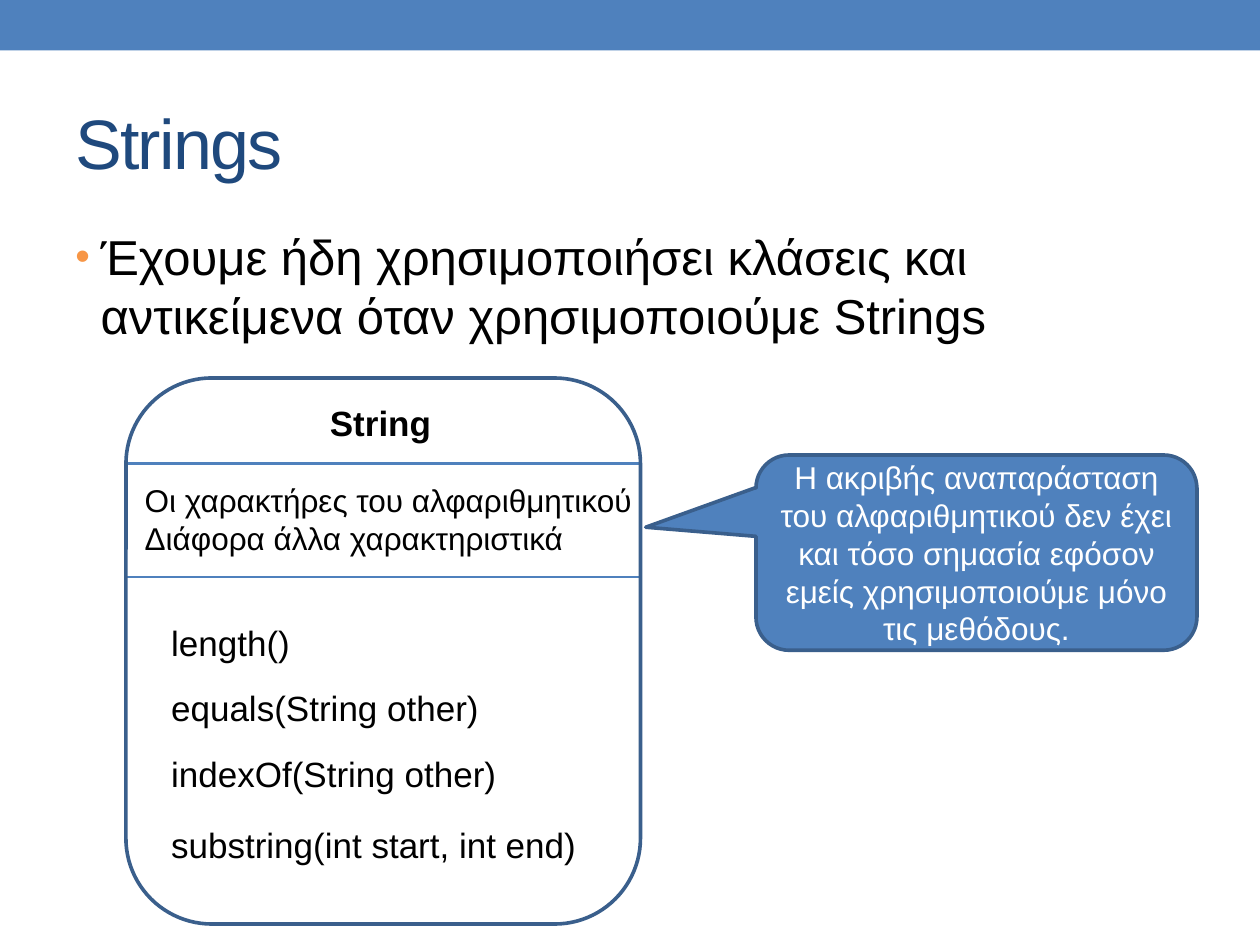
import pptx
import pptx.util
import pptx.dml.color
import pptx.enum.shapes
import pptx.enum.text
from lxml import etree

Pt = pptx.util.Pt
SHAPE = pptx.enum.shapes.MSO_SHAPE
ALIGN = pptx.enum.text.PP_ALIGN
ANCHOR = pptx.enum.text.MSO_ANCHOR
AUTO_SIZE = pptx.enum.text.MSO_AUTO_SIZE
qn = pptx.oxml.ns.qn

COLORS = {"blue": "4F81BD", "outline": "3A5F8C", "title": "1F497D",
          "bullet": "F79646", "text": "000000", "white": "FFFFFF"}
FONT = "Arial"


def rgb(name):
    return pptx.dml.color.RGBColor.from_string(COLORS[name])


def write(tf, lines, size, color="text", bold=False, align=ALIGN.LEFT):
    for i, line in enumerate(lines):
        p = tf.paragraphs[0] if i == 0 else tf.add_paragraph()
        p.text = line
        p.alignment = align
        p.font.name, p.font.size, p.font.bold = FONT, Pt(size), bold
        p.font.color.rgb = rgb(color)


def add_text(s, x, y, w, h, lines, size, color="text", bold=False, wrap=True, grow=False):
    tf = s.shapes.add_textbox(Pt(x), Pt(y), Pt(w), Pt(h)).text_frame
    tf.word_wrap = wrap
    tf.auto_size = AUTO_SIZE.SHAPE_TO_FIT_TEXT if grow else AUTO_SIZE.NONE
    write(tf, lines, size, color, bold)
    return tf


def add_box(s, kind, x, y, w, h, fill=None, line=None):
    sp = s.shapes.add_shape(kind, Pt(x), Pt(y), Pt(w), Pt(h))
    sp.shadow.inherit = False
    if fill:
        sp.fill.solid()
        sp.fill.fore_color.rgb = rgb(fill)
    else:
        sp.fill.background()
    if line:
        sp.line.color.rgb = rgb(line)
        sp.line.width = Pt(2.08)
    else:
        sp.line.fill.background()
    return sp


def add_divider(s, x, y, w):
    line = s.shapes.add_connector(pptx.enum.shapes.MSO_CONNECTOR.STRAIGHT,
                                  Pt(x), Pt(y), Pt(x + w), Pt(y))
    line.line.color.rgb = rgb("blue")
    line.line.width = Pt(1.5)
    etree.SubElement(line._element.spPr, qn("a:effectLst"))


def add_title(s, x, y, w, h, text):
    tf = add_text(s, x, y, w, h, [text], 40, "title")
    tf.vertical_anchor = ANCHOR.MIDDLE
    # Tighten the letters by one point
    tf.paragraphs[0].runs[0].font._element.set("spc", "-100")


def add_bullet(s, x, y, w, h, text):
    p = add_text(s, x, y, w, h, [text], 28).paragraphs[0]
    p.space_before = Pt(5.6)
    pPr = p._p.get_or_add_pPr()
    indent = Pt(14.4)
    pPr.set("marL", str(indent))
    pPr.set("indent", str(-indent))
    # Bullet parts go ahead of the default run properties
    bullet_color = etree.Element(qn("a:buClr"))
    etree.SubElement(bullet_color, qn("a:srgbClr"), val=COLORS["bullet"])
    parts = [bullet_color,
             etree.Element(qn("a:buSzPct"), val="85000"),
             etree.Element(qn("a:buFont"), typeface=FONT),
             etree.Element(qn("a:buChar"), char="•")]
    defaults = pPr.find(qn("a:defRPr"))
    for part in parts:
        defaults.addprevious(part)


def add_class_diagram(s, x, y, w, h):
    # Class name
    add_text(s, x + 109.4, y + 10, 72.7, 31.5, ["String"], 20,
             bold=True, wrap=False, grow=True)
    # Fields
    add_text(s, x + 3.6, y + 55.4, 300, 51,
             ["Οι χαρακτήρες του αλφαριθμητικού", "Διάφορα άλλα χαρακτηριστικά"],
             18, grow=True)
    for dy in (49, 113.7):
        add_divider(s, x, y + dy, w)
    add_box(s, SHAPE.ROUNDED_RECTANGLE, x, y, w, h, line="outline")
    # Methods
    methods = [("length()", 135.4, 82.8),
               ("equals(String other)", 172.8, 191.5),
               ("indexOf(String other)", 210.2, 201.6),
               ("substring(int start, int end)", 251.3, 247.7)]
    for text, dy, width in methods:
        add_text(s, x + 18.7, y + dy, width, 31.5, [text], 20, wrap=False, grow=True)


def add_callout(s, x, y, w, h, text):
    sp = add_box(s, SHAPE.ROUNDED_RECTANGULAR_CALLOUT, x, y, w, h, "blue", "outline")
    sp.adjustments[0] = -0.75
    sp.adjustments[1] = -0.13
    sp.adjustments[2] = 0.17
    tf = sp.text_frame
    tf.word_wrap = True
    tf.vertical_anchor = ANCHOR.MIDDLE
    write(tf, [text], 18, "white", align=ALIGN.CENTER)


def main():
    prs = pptx.Presentation()
    prs.slide_width, prs.slide_height = Pt(720), Pt(540)
    s = prs.slides.add_slide(prs.slide_layouts[6])

    # Top band
    add_box(s, SHAPE.RECTANGLE, 0, 0, 720, 28.8, fill="blue")
    add_title(s, 36, 42, 648, 78, "Strings")
    add_bullet(s, 36, 126, 648, 384,
               "Έχουμε ήδη χρησιμοποιήσει κλάσεις και αντικείμενα "
               "όταν χρησιμοποιούμε Strings")
    add_class_diagram(s, 72, 216, 294, 312)
    add_callout(s, 432, 260, 252, 111.6,
                "Η ακριβής αναπαράσταση του αλφαριθμητικού δεν έχει και τόσο "
                "σημασία εφόσον εμείς χρησιμοποιούμε μόνο τις μεθόδους.")
    prs.save("out.pptx")


if __name__ == "__main__":
    main()
